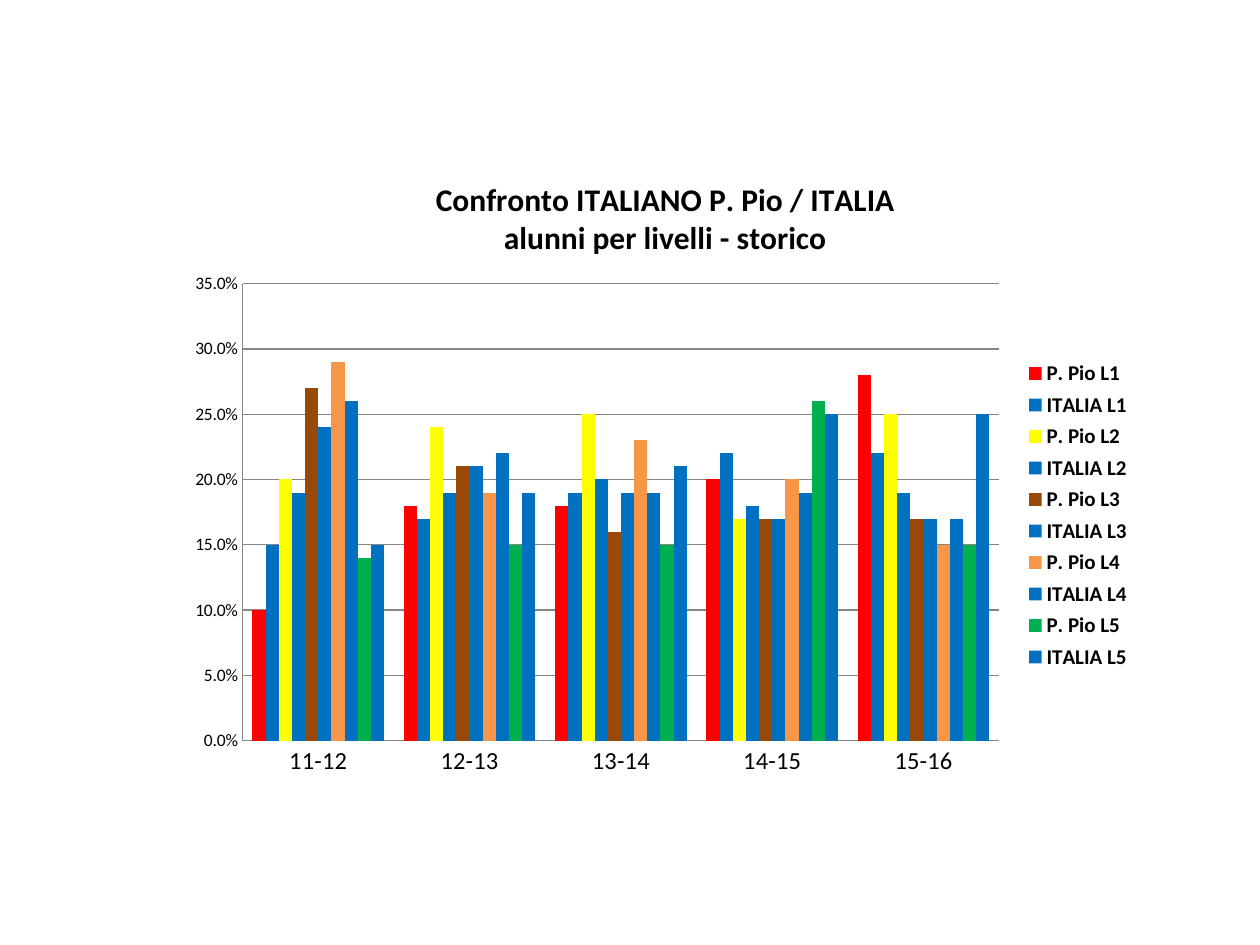
"""Build a slide with a clustered column chart of Italian levels by school year."""
from lxml import etree
from pptx import Presentation
from pptx.chart.data import CategoryChartData
from pptx.dml.color import RGBColor
from pptx.enum.chart import XL_CHART_TYPE, XL_LEGEND_POSITION, XL_TICK_MARK
from pptx.oxml.ns import qn
from pptx.util import Inches, Pt

COLUMNS = XL_CHART_TYPE.COLUMN_CLUSTERED
LEGEND_RIGHT = XL_LEGEND_POSITION.RIGHT
NO_TICKS = XL_TICK_MARK.NONE

TITLE = ["Confronto ITALIANO P. Pio / ITALIA", "alunni per livelli - storico"]
YEARS = ["11-12", "12-13", "13-14", "14-15", "15-16"]
ITALIA_COLOR = "0070C0"
LEVELS = [
    ("L1", "FF0000", [0.1, 0.18, 0.18, 0.2, 0.28], [0.15, 0.17, 0.19, 0.22, 0.22]),
    ("L2", "FFFF00", [0.2, 0.24, 0.25, 0.17, 0.25], [0.19, 0.19, 0.2, 0.18, 0.19]),
    ("L3", "984807", [0.27, 0.21, 0.16, 0.17, 0.17], [0.24, 0.21, 0.19, 0.17, 0.17]),
    ("L4", "F79646", [0.29, 0.19, 0.23, 0.2, 0.15], [0.26, 0.22, 0.19, 0.19, 0.17]),
    ("L5", "00B050", [0.14, 0.15, 0.15, 0.26, 0.15], [0.15, 0.19, 0.21, 0.25, 0.25]),
]
CHART_FRAME = (1.38, 1.23, 7.8, 5.11)
PLOT_LAYOUT = {"layoutTarget": "inner", "xMode": "edge", "yMode": "edge",
               "x": 0.07, "y": 0.2, "w": 0.77, "h": 0.71}
LEGEND_LAYOUT = {"xMode": "edge", "yMode": "edge",
                 "x": 0.86, "y": 0.31, "w": 0.12, "h": 0.5}


def color(value):
    return RGBColor.from_string(value)


def style_font(font, size, bold=False):
    font.name = "Calibri"
    font.size = Pt(size)
    font.bold = bold
    font.color.rgb = color("000000")


def style_line(line):
    line.color.rgb = color("868686")
    line.width = Pt(0.75)


def style_axis(axis, size):
    axis.major_tick_mark = NO_TICKS
    axis.minor_tick_mark = NO_TICKS
    style_font(axis.tick_labels.font, size)
    style_line(axis.format.line)


def place_part(part, settings, index):
    for old_layout in part.findall(qn("c:layout")):
        part.remove(old_layout)
    layout = etree.Element(qn("c:layout"))
    manual = etree.SubElement(layout, qn("c:manualLayout"))
    for name, value in settings.items():
        etree.SubElement(manual, qn(f"c:{name}")).set("val", str(value))
    part.insert(index, layout)


def add_title(chart):
    frame = chart.chart_title.text_frame
    frame.text = "\n".join(TITLE)
    for paragraph in frame.paragraphs:
        for span in paragraph.runs:
            style_font(span.font, 18, True)
    chart.chart_title.include_in_layout = False


def add_legend(chart):
    chart.has_legend = True
    legend = chart.legend
    legend.position = LEGEND_RIGHT
    legend.include_in_layout = False
    style_font(legend.font, 12, True)
    place_part(legend._element, LEGEND_LAYOUT, 1)


def add_levels_chart(page):
    data = CategoryChartData(number_format="0.0%")
    data.categories = YEARS
    fills = []
    for level, fill, school, italy in LEVELS:
        data.add_series(f"P. Pio {level}", school)
        data.add_series(f"ITALIA {level}", italy)
        fills += [fill, ITALIA_COLOR]
    frame = [Inches(length) for length in CHART_FRAME]
    chart = page.shapes.add_chart(COLUMNS, *frame, data).chart
    style_font(chart.font, 10)
    add_title(chart)
    add_legend(chart)

    plot = chart.plots[0]
    place_part(plot._element.getparent(), PLOT_LAYOUT, 0)
    plot.gap_width = 150
    plot.overlap = 0
    plot.vary_by_categories = False
    for series, fill in zip(plot.series, fills):
        series.format.fill.solid()
        series.format.fill.fore_color.rgb = color(fill)

    style_axis(chart.category_axis, 14)
    values = chart.value_axis
    style_axis(values, 10)
    values.minimum_scale, values.maximum_scale, values.major_unit = 0, 0.35, 0.05
    values.tick_labels.number_format = "0.0%"
    values.tick_labels.number_format_is_linked = False
    style_line(values.major_gridlines.format.line)


def main():
    deck = Presentation()
    deck.slide_width, deck.slide_height = Inches(10), Inches(7.5)
    page = deck.slides.add_slide(deck.slide_layouts[6])
    add_levels_chart(page)
    deck.save("out.pptx")


if __name__ == "__main__":
    main()
